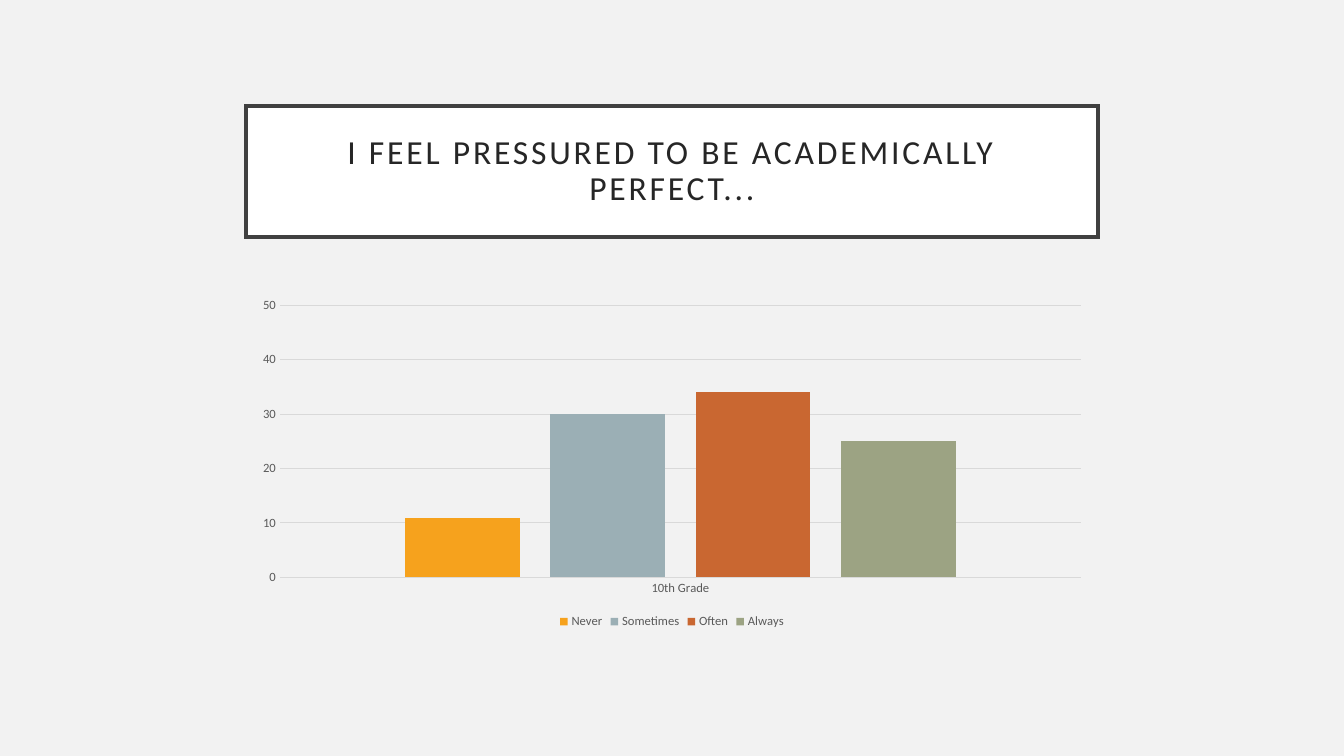
from lxml import etree
from pptx import Presentation
from pptx import util as u
from pptx.chart.data import CategoryChartData
from pptx.dml.color import RGBColor
from pptx.enum import chart as ch, shapes, text
from pptx.oxml.ns import qn

PX = 914400 / 100.8
PAGE = RGBColor(0xF2, 0xF2, 0xF2)
WHITE = RGBColor(0xFF, 0xFF, 0xFF)
FRAME = RGBColor(0x40, 0x40, 0x40)
INK = RGBColor(0x26, 0x26, 0x26)
LABEL = RGBColor(0x59, 0x59, 0x59)
GRID = RGBColor(0xD9, 0xD9, 0xD9)

ANSWERS = [
    ("Never", 11, RGBColor(0xF6, 0xA2, 0x1D)),
    ("Sometimes", 30, RGBColor(0x9B, 0xAF, 0xB5)),
    ("Often", 34, RGBColor(0xC9, 0x67, 0x31)),
    ("Always", 25, RGBColor(0x9C, 0xA3, 0x83)),
]


def px(length):
    return u.Emu(round(length * PX))


def apply(target, **values):
    for name, value in values.items():
        setattr(target, name, value)


class SurveySlide:
    font_name = "Calibri"

    def __init__(self, prs):
        self.slide = prs.slides.add_slide(prs.slide_layouts[6])
        fill = self.slide.background.fill
        fill.solid()
        fill.fore_color.rgb = PAGE

    def style_font(self, font, size, color):
        apply(font, name=self.font_name, size=u.Pt(size), bold=False)
        font.color.rgb = color

    def style_line(self, line, width, color):
        line.width = u.Pt(width)
        line.color.rgb = color

    def framed_title(self, wording, *box):
        frame = self.slide.shapes.add_shape(
            shapes.MSO_SHAPE.RECTANGLE, *map(px, box))
        frame.shadow.inherit = False
        frame.fill.solid()
        frame.fill.fore_color.rgb = WHITE
        self.style_line(frame.line, 2.5, FRAME)
        etree.SubElement(frame.line._ln, qn("a:miter"), lim="800000")

        body = frame.text_frame
        apply(body, word_wrap=True, vertical_anchor=text.MSO_ANCHOR.MIDDLE)
        for side in ("left", "top", "right", "bottom"):
            setattr(body, f"margin_{side}", px(20))
        heading = body.paragraphs[0]
        apply(heading, alignment=text.PP_ALIGN.CENTER, line_spacing=0.9)
        run = heading.add_run()
        run.text = wording
        self.style_font(run.font, 24, INK)
        run.font._element.set("spc", "200")

    def column_chart(self, category, answers, *box):
        data = CategoryChartData()
        data.categories = [category]
        for name, share, _ in answers:
            data.add_series(name, [share])
        chart = self.slide.shapes.add_chart(
            ch.XL_CHART_TYPE.COLUMN_CLUSTERED, *map(px, box), data).chart
        apply(chart, has_title=False, has_legend=True)
        self.style_font(chart.font, 9, LABEL)
        apply(chart.legend, position=ch.XL_LEGEND_POSITION.BOTTOM,
              include_in_layout=False)
        self.style_font(chart.legend.font, 9, LABEL)

        for axis in (chart.category_axis, chart.value_axis):
            apply(axis, major_tick_mark=ch.XL_TICK_MARK.NONE,
                  minor_tick_mark=ch.XL_TICK_MARK.NONE)
            self.style_font(axis.tick_labels.font, 9, LABEL)
        self.style_line(chart.category_axis.format.line, 0.75, GRID)
        shares = chart.value_axis
        apply(shares, minimum_scale=0, maximum_scale=50, major_unit=10)
        shares.format.line.fill.background()
        self.style_line(shares.major_gridlines.format.line, 0.75, GRID)

        plot = chart.plots[0]
        apply(plot, gap_width=219, overlap=-27, vary_by_categories=False)
        for series, (_, _, color) in zip(plot.series, answers):
            series.format.fill.solid()
            series.format.fill.fore_color.rgb = color


def main():
    prs = Presentation()
    apply(prs, slide_width=px(1344), slide_height=px(756))
    survey = SurveySlide(prs)
    survey.framed_title("I FEEL PRESSURED TO BE ACADEMICALLY PERFECT...",
                        246, 106, 852, 131)
    survey.column_chart("10th Grade", ANSWERS, 246, 291, 852, 342)
    prs.save("out.pptx")


if __name__ == "__main__":
    main()
